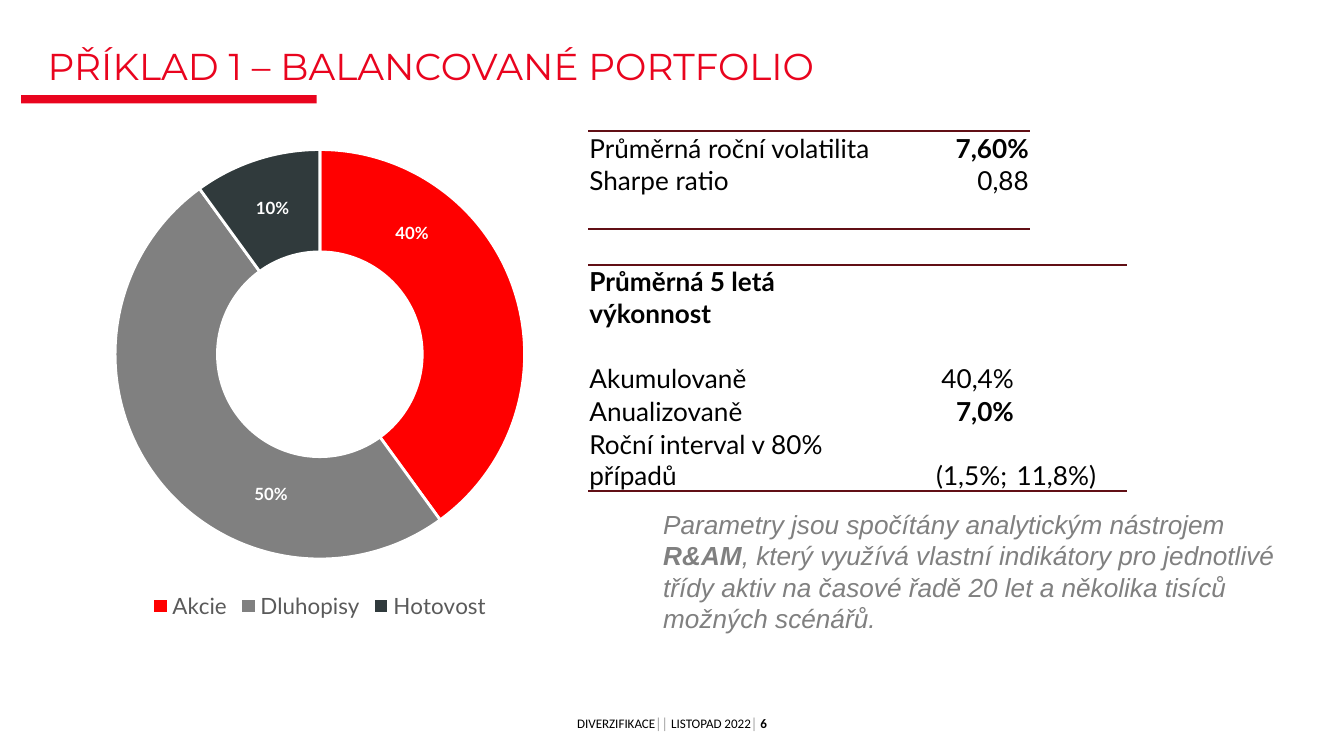
from lxml.etree import SubElement as Sub
from pptx import Presentation
from pptx.chart.data import CategoryChartData as Data
from pptx.dml.color import RGBColor as RGB
from pptx.enum.chart import XL_CHART_TYPE as Kind, XL_LEGEND_POSITION as Spot
from pptx.enum.shapes import MSO_SHAPE as Shape
from pptx.enum.text import MSO_ANCHOR as Anchor, PP_ALIGN as Align
from pptx.oxml.ns import qn
from pptx.util import Inches, Pt

WIDE = 10
HIGH = WIDE * 9 / 16
PLAIN = "{2D5ABB26-0587-4C30-8999-92F81FD0307C}"


def tint(code):
    return RGB.from_string(code)


class Deck:
    red, dark, gray, wine = "E9041E", "010101", "808080", "610F15"
    head, body, note, foot = "Montserrat", "Lato", "Arial", "Calibri"

    def __init__(self):
        self.prs = Presentation()
        self.prs.slide_width, self.prs.slide_height = Inches(WIDE), Inches(HIGH)
        self.slide = self.prs.slides.add_slide(self.prs.slide_layouts[5])
        self.shapes = self.slide.shapes

    def col(self, n):
        return Inches(WIDE * n / 100)

    def row(self, n):
        return Inches(HIGH * n / 100)

    def box(self, x, y, w, h):
        return self.col(x), self.row(y), self.col(w), self.row(h)

    def style(self, font, face, size, color, bold=False, slant=False):
        font.name, font.size = face, Pt(size)
        font.bold, font.italic = bold, slant
        font.color.rgb = tint(color)

    def inset(self, frame, gap):
        frame.margin_left = frame.margin_right = Inches(gap)
        frame.margin_top = frame.margin_bottom = Inches(gap)

    def title(self, text, area):
        item = self.shapes.title
        item.left, item.top, item.width, item.height = self.box(*area)
        frame = item.text_frame
        frame.text = text
        frame.vertical_anchor = Anchor.BOTTOM
        self.inset(frame, 0)
        para = frame.paragraphs[0]
        para.alignment, para.line_spacing = Align.LEFT, 0.75
        self.style(para.runs[0].font, self.head, 20, self.red)

    def bar(self, area):
        item = self.shapes.add_shape(Shape.RECTANGLE, *self.box(*area))
        item.shadow.inherit = False
        item.fill.solid()
        item.fill.fore_color.rgb = tint(self.red)
        item.line.fill.background()

    def text(self, parts, area, face, size, gap=0, align=Align.LEFT,
             anchor=Anchor.TOP, wrap=True, slant=False):
        frame = self.shapes.add_textbox(*self.box(*area)).text_frame
        frame.word_wrap, frame.vertical_anchor = wrap, anchor
        self.inset(frame, gap)
        para = frame.paragraphs[0]
        para.alignment = align
        for words, color, bold in parts:
            run = para.add_run()
            run.text = words
            self.style(run.font, face, size, color, bold, slant)

    def ring(self, parts, moves, area):
        data = Data(number_format="0%")
        data.categories = [name for name, _, _ in parts]
        data.add_series("Series 1", [share for _, share, _ in parts])
        chart = self.shapes.add_chart(Kind.DOUGHNUT, *self.box(*area), data).chart
        self.style(chart.font, self.body, 10, self.dark)
        chart.has_title = False
        chart.has_legend = True
        chart.legend.position = Spot.BOTTOM
        chart.legend.include_in_layout = False
        self.style(chart.legend.font, self.body, 12, "5A5A5A")
        plot = chart.plots[0]
        plot.vary_by_categories = True
        for hole in chart.element.iter(qn("c:holeSize")):
            hole.set("val", "75")
        series = plot.series[0]
        for i, (_, _, color) in enumerate(parts):
            look = series.points[i].format
            look.fill.solid()
            look.fill.fore_color.rgb = tint(color)
            look.line.color.rgb = tint("FFFFFF")
            look.line.width = Pt(1.5)
        tags = series.data_labels
        tags.show_value, tags.show_percentage = True, False
        tags.number_format, tags.number_format_is_linked = "0%", False
        self.style(tags.font, self.body, 9, "FFFFFF", True)
        for i in range(len(moves)):
            font = series.points[i].data_label.font
            self.style(font, self.body, 9, "FFFFFF", True)
        for tag, move in zip(chart.element.iter(qn("c:dLbl")), moves):
            self.shift(tag, *move)

    def shift(self, tag, x, y):
        lay = Sub(tag, qn("c:layout"))
        spot = Sub(lay, qn("c:manualLayout"))
        Sub(spot, qn("c:x"), val=str(x))
        Sub(spot, qn("c:y"), val=str(y))
        tag.insert(1, lay)

    def edge(self, cell, side):
        line = Sub(cell.fill._xPr, qn("a:" + side), w=str(Pt(1)))
        fill = Sub(line, qn("a:solidFill"))
        Sub(fill, qn("a:srgbClr"), val=self.wine)

    def cell(self, cell, text, right, bold):
        self.inset(cell, 0.01)
        cell.margin_bottom = 0
        cell.vertical_anchor = Anchor.BOTTOM
        para = cell.text_frame.paragraphs[0]
        if text:
            para.text = text
            para.alignment = Align.RIGHT if right else Align.LEFT
            self.style(para.runs[0].font, self.body, 14, self.dark, bold)
        else:
            Sub(para._p, qn("a:endParaRPr"), sz="1400")

    def table(self, rows, cols, x, y, right, bold, merge=False):
        area = self.box(x, y, sum(cols), 3.56 * len(rows))
        table = self.shapes.add_table(len(rows), len(cols), *area).table
        table.first_row = table.horz_banding = False
        table._tbl.tblPr.find(qn("a:tableStyleId")).text = PLAIN
        for n, wide in enumerate(cols):
            table.columns[n].width = self.col(wide)
        for r, row in enumerate(rows):
            for c in range(len(cols)):
                cell, text = table.cell(r, c), row.get(c, "")
                self.cell(cell, text, c == right, text in bold)
                if r == 0:
                    self.edge(cell, "lnT")
                if r == len(rows) - 1:
                    self.edge(cell, "lnB")
                cell.fill.background()
        if merge:
            table.cell(0, 0).merge(table.cell(0, 1))


def main():
    deck = Deck()
    dark, gray = deck.dark, deck.gray
    deck.text([("DIVERZIFIKACE", dark, False), ("││ ", gray, False),
               ("LISTOPAD 2022", dark, False), ("│ ", gray, False),
               ("6", dark, True)],
              (42.45, 94.58, 15.1, 2.14), deck.foot, 7,
              align=Align.CENTER, anchor=Anchor.MIDDLE, wrap=False)
    deck.bar((1.57, 12.6, 22, 1.07))
    deck.title("PŘÍKLAD 1 – BALANCOVANÉ PORTFOLIO", (3.55, 6.94, 92.9, 4.63))
    deck.ring([("Akcie", 0.4, "FF0000"), ("Dluhopisy", 0.5, gray),
               ("Hotovost", 0.1, "303A3C")], [(-0.1, -0.15), (0.14, 0.1)],
              (3.75, 17.33, 40.1, 65.3))
    deck.table([{0: "Průměrná roční volatilita", 2: "7,60%"},
                {0: "Sharpe ratio", 2: "0,88"}, {}],
               (14.6, 7.3, 11), 43.75, 17.33, 2, ["7,60%"], merge=True)
    deck.table([{0: "Průměrná 5 letá výkonnost"}, {},
                {0: "Akumulovaně", 3: "40,4%"},
                {0: "Anualizovaně", 3: "7,0%"},
                {0: "Roční interval v 80% případů", 3: "(1,5%; ", 4: "11,8%)"}],
               (23.4, 1.4, 0.9, 6.1, 8.3), 43.75, 35.02, 3,
               ["Průměrná 5 letá výkonnost", "7,0%"])
    deck.text([("Parametry jsou spočítány analytickým nástrojem ", gray, False),
               ("R&AM", gray, True),
               (", který využívá vlastní indikátory pro jednotlivé třídy aktiv "
                "na časové řadě 20 let a několika tisíců možných scénářů.",
                gray, False)],
              (48.95, 66.55, 48.7, 18.15), deck.note, 14, gap=0.04, slant=True)
    deck.prs.save("out.pptx")


if __name__ == "__main__":
    main()
